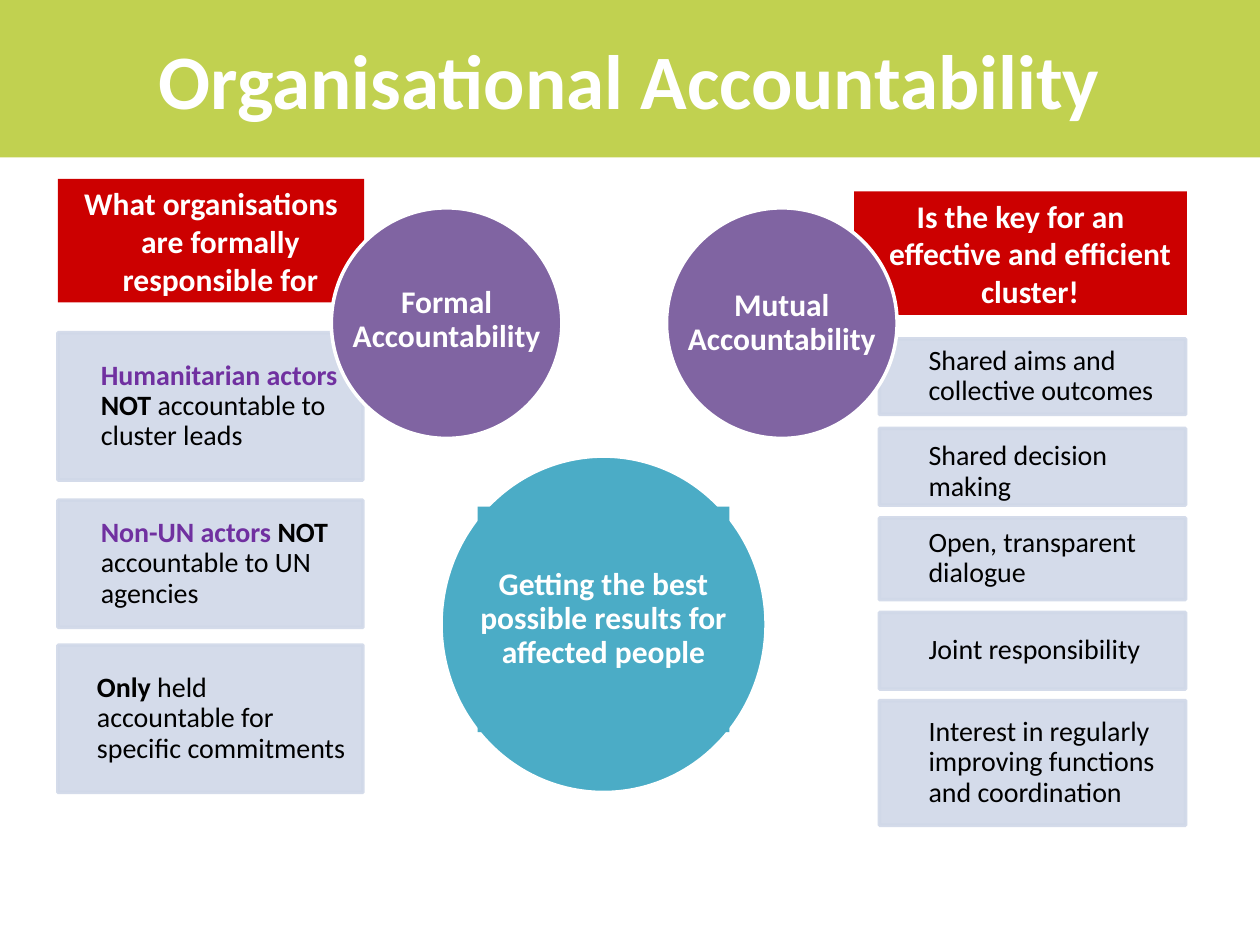
import pptx
import pptx.dml.color
import pptx.enum.shapes
import pptx.enum.text
import pptx.oxml
import pptx.oxml.ns
import pptx.util

Inches = pptx.util.Inches
Pt = pptx.util.Pt
Shape = pptx.enum.shapes.MSO_SHAPE
Align = pptx.enum.text.PP_ALIGN
Anchor = pptx.enum.text.MSO_ANCHOR

WHITE, BLACK, VIOLET = "FFFFFF", "000000", "7030A0"
RED, GREEN, CARD, PURPLE, TEAL = "CC0000", "C1D150", "D0D8E8", "8064A2", "4BACC6"


def rgb(value):
    return pptx.dml.color.RGBColor.from_string(value)


def box(left, top, width, height):
    return [Inches(v) for v in (left, top, width, height)]


def set_alpha(color_format_parent, percent):
    """Make every solid colour below an element partly transparent."""
    for clr in color_format_parent.iter(pptx.oxml.ns.qn("a:srgbClr")):
        alpha = pptx.oxml.parse_xml(
            "<a:alpha %s val='%d'/>" % (pptx.oxml.ns.nsdecls("a"), percent * 1000))
        clr.append(alpha)


def write(sp, runs, size=18, color=WHITE, bold=True, align=Align.CENTER,
          anchor=Anchor.MIDDLE, spacing=None, insets=None, hanging=0):
    """Fill a shape with one paragraph; runs is text or (text, color, bold) tuples."""
    if isinstance(runs, str):
        runs = [(runs, color, bold)]
    tf = sp.text_frame
    tf.word_wrap = True
    tf.vertical_anchor = anchor
    if insets:
        tf.margin_left, tf.margin_top, tf.margin_right, tf.margin_bottom = map(Inches, insets)
    p = tf.paragraphs[0]
    p.alignment = align
    if spacing:
        p.line_spacing = spacing
    if hanging:
        pPr = p._p.get_or_add_pPr()
        pPr.set("marL", str(Inches(hanging)))
        pPr.set("indent", str(-Inches(hanging)))
    for text, run_color, run_bold in runs:
        r = p.add_run()
        r.text = text
        r.font.name = "Calibri"
        r.font.size = Pt(size)
        r.font.bold = run_bold
        r.font.color.rgb = rgb(run_color)


class AccountabilitySlide:
    def __init__(self, prs):
        self.s = prs.slides.add_slide(prs.slide_layouts[5])

    def title(self, text):
        sp = self.s.shapes.title
        sp.left, sp.top, sp.width, sp.height = box(0, 0, 10, 1.25)
        sp.fill.solid()
        sp.fill.fore_color.rgb = rgb(GREEN)
        write(sp, text, size=44)

    def shape(self, kind, place, fill, line=None):
        sp = self.s.shapes.add_shape(kind, *box(*place))
        sp.shadow.inherit = False
        sp.fill.solid()
        sp.fill.fore_color.rgb = rgb(fill)
        if line:
            sp.line.color.rgb = rgb(line)
            sp.line.width = Pt(2)
        else:
            sp.line.fill.background()
        return sp

    def header(self, place, text):
        sp = self.shape(Shape.RECTANGLE, place, RED)
        write(sp, text, anchor=Anchor.TOP, insets=(0.07, 0.04, 0.07, 0.04), hanging=0.15)
        sp.text_frame.auto_size = pptx.enum.text.MSO_AUTO_SIZE.SHAPE_TO_FIT_TEXT

    def card(self, place, runs, text_place, inset):
        sp = self.shape(Shape.RECTANGLE, place, CARD, CARD)
        set_alpha(sp._element.spPr, 90)
        label = self.s.shapes.add_textbox(*box(*text_place))
        write(label, runs, size=16, color=BLACK, bold=False, align=Align.LEFT,
              spacing=0.9, insets=(0, inset, inset, inset))

    def circle(self, place, fill, text, text_place, text_fill=None):
        self.shape(Shape.OVAL, place, fill, WHITE)
        if text_fill:
            label = self.shape(Shape.RECTANGLE, text_place, text_fill)
        else:
            label = self.s.shapes.add_textbox(*box(*text_place))
        write(label, text, spacing=0.9, insets=(0, 0, 0, 0))


def main():
    prs = pptx.Presentation()
    prs.slide_width, prs.slide_height = Inches(10), Inches(7.5)
    slide = AccountabilitySlide(prs)
    slide.title("Organisational Accountability")

    # Top, height, text area (left, top, width, height), runs
    formal_cards = [
        (2.64, 1.17, (0.8, 2.64, 2.08, 1.17),
         [("Humanitarian actors ", VIOLET, True), ("NOT", BLACK, True),
          (" accountable to cluster leads", BLACK, False)]),
        (3.97, 1.01, (0.8, 3.95, 2.04, 1.05),
         [("Non-UN actors ", VIOLET, True), ("NOT ", BLACK, True),
          ("accountable to UN agencies", BLACK, False)]),
        (5.12, 1.17, (0.77, 5.12, 2.07, 1.17),
         [("Only", BLACK, True),
          (" held accountable for specific commitments", BLACK, False)]),
    ]
    for top, height, text_place, runs in formal_cards:
        slide.card((0.46, top, 2.42, height), runs, text_place, inset=0.09)
    slide.header((0.46, 1.42, 2.43, 0.98), "What organisations are formally responsible for")
    slide.circle((2.63, 1.65, 1.83, 1.83), PURPLE, "Formal Accountability",
                 (2.68, 1.9, 1.73, 1.29))

    # Top, height, downward shift of the text, text
    mutual_cards = [
        (2.69, 0.6, 0, "Shared aims and collective outcomes"),
        (3.4, 0.61, 0.04, "Shared decision making"),
        (4.11, 0.65, 0, "Open, transparent dialogue"),
        (4.86, 0.61, 0, "Joint responsibility"),
        (5.56, 0.99, 0, "Interest in regularly improving functions and coordination"),
    ]
    slide.header((6.78, 1.52, 2.64, 0.98), "Is the key for an effective and efficient cluster!")
    for top, height, shift, text in mutual_cards:
        slide.card((6.98, top, 2.43, height), text,
                   (7.37, top + shift, 2.04, height), inset=0.07)
    slide.circle((5.29, 1.65, 1.83, 1.83), PURPLE, "Mutual Accountability",
                 (5.29, 1.92, 1.83, 1.29))

    slide.circle((3.5, 3.62, 2.58, 2.67), TEAL,
                 "Getting the best possible results for affected people",
                 (3.79, 4.02, 2, 1.79), text_fill=TEAL)
    prs.save("out.pptx")


if __name__ == "__main__":
    main()
